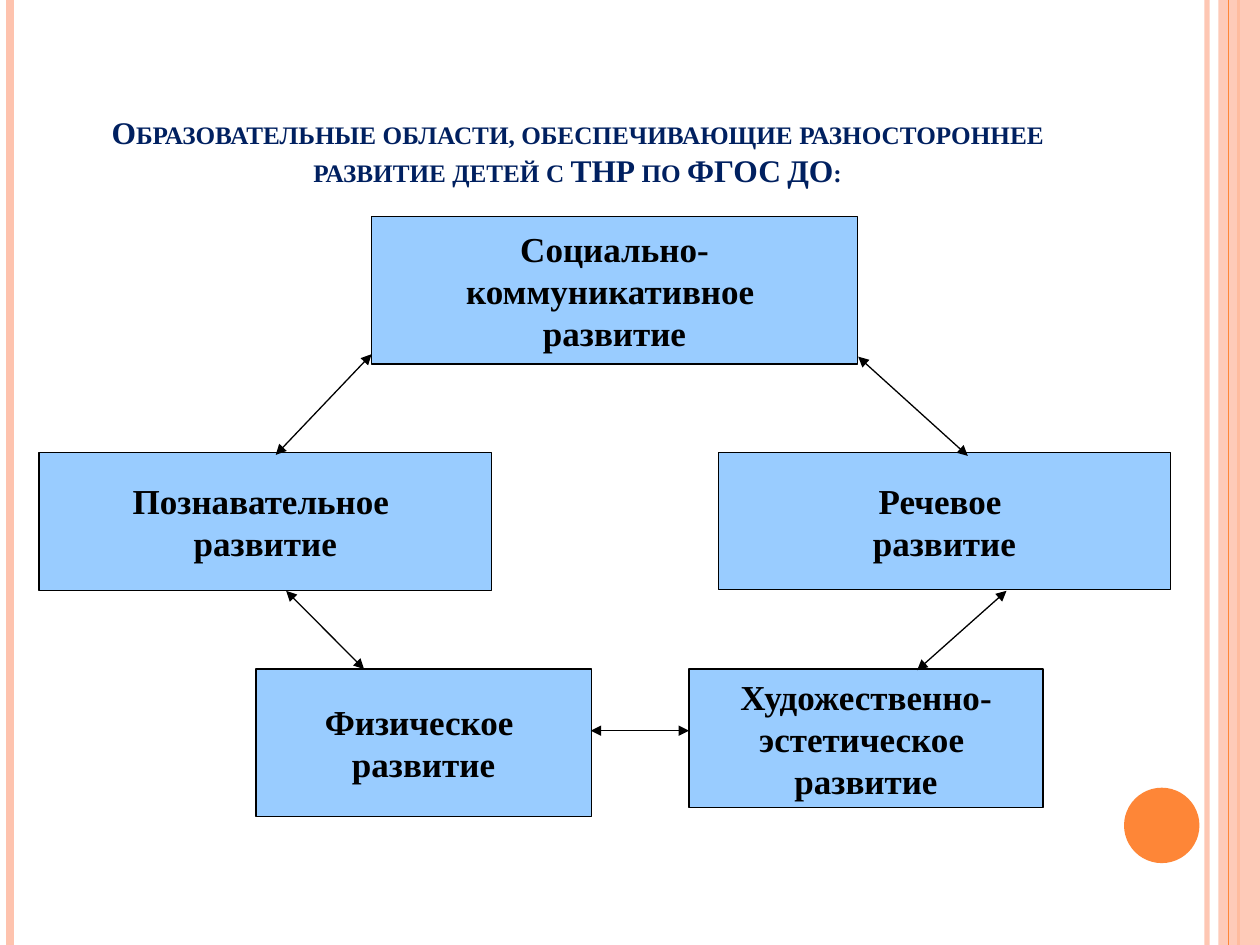
from lxml import etree
from pptx import Presentation
from pptx.dml.color import RGBColor
from pptx.enum.shapes import MSO_CONNECTOR, MSO_SHAPE
from pptx.enum.text import MSO_ANCHOR, MSO_AUTO_SIZE, PP_ALIGN
from pptx.oxml.ns import qn
from pptx.util import Cm, Pt

LINE = MSO_CONNECTOR.STRAIGHT
RECT, OVAL = MSO_SHAPE.RECTANGLE, MSO_SHAPE.OVAL
MID, LOW = MSO_ANCHOR.MIDDLE, MSO_ANCHOR.BOTTOM
MEAN = PP_ALIGN.CENTER
FIXED = MSO_AUTO_SIZE.NONE

HUES = {"peach": "FEC3AE", "orange": "FE8637", "navy": "002060",
        "sky": "99CCFF", "black": "000000"}
WIDE, HIGH = 25.4, 19.05

TITLE = ("Образовательные области, обеспечивающие разностороннее "
         "развитие детей с ТНР по ФГОС ДО:")
TITLE_AT = (1.27, 0.76, 20.75, 3.18)
BOXES = [
    (["Социально-", "коммуникативное ", "развитие"], (7.49, 4.37, 9.8, 2.97)),
    (["Художественно-", "эстетическое ", "развитие"], (13.89, 13.49, 7.14, 2.79)),
    (["Речевое ", "развитие"], (14.48, 9.12, 9.12, 2.77)),
    (["Физическое ", "развитие"], (5.16, 13.49, 6.76, 2.97)),
    (["Познавательное ", "развитие"], (0.79, 9.12, 9.12, 2.79)),
]
ARROWS = [
    (7.49, 7.14, 5.56, 9.17),
    (17.3, 7.19, 19.51, 9.19),
    (5.77, 11.91, 7.34, 13.49),
    (11.91, 14.73, 13.89, 14.73),
    (18.49, 13.51, 20.29, 11.91),
]
UNDER = [(24.33, "peach", 3, 93), (0.2, "peach", 4.5, 100),
         (24.97, "orange", 1.5, 100)]
BAND = (24.56, 0, 0.84, HIGH)
OVER = (24.77, "orange", 0.75, 100)
DOT = (22.66, 15.88, 1.52, 1.52)


def hue(name):
    return RGBColor.from_string(HUES[name])


def fade(node, part):
    if part < 100:
        tint = node.find(".//" + qn("a:srgbClr"))
        etree.SubElement(tint, qn("a:alpha"), val=str(part * 1000))


def style(item, **values):
    for key, value in values.items():
        setattr(item, key, value)


def write(frame, rows, size, color, anchor, wrap):
    style(frame, auto_size=FIXED, vertical_anchor=anchor, word_wrap=wrap)
    for i, row in enumerate(rows):
        para = frame.paragraphs[0] if i == 0 else frame.add_paragraph()
        para.alignment = MEAN
        run = para.add_run()
        run.text = row
        style(run.font, name="Times New Roman", size=Pt(size), bold=True)
        run.font.color.rgb = hue(color)
    return run


def draw(shapes, kind, spot, color, part=100):
    shape = shapes.add_shape(kind, *map(Cm, spot))
    shape.shadow.inherit = False
    shape.fill.solid()
    shape.fill.fore_color.rgb = hue(color)
    fade(shape._element.spPr, part)
    shape.line.fill.background()
    return shape


def link(shapes, ends, color, width, part=100, heads=False):
    line = shapes.add_connector(LINE, *map(Cm, ends))
    line.line.color.rgb = hue(color)
    line.line.width = Pt(width)
    props = line._element.spPr
    fade(props, part)
    if heads:
        for end in ("a:headEnd", "a:tailEnd"):
            etree.SubElement(props.find(qn("a:ln")), qn(end), type="triangle")
    etree.SubElement(props, qn("a:effectLst"))


def stripe(shapes, x, color, width, part):
    link(shapes, (x, 0, x, HIGH), color, width, part)


def main():
    deck = Presentation()
    style(deck, slide_width=Cm(WIDE), slide_height=Cm(HIGH))
    shapes = deck.slides.add_slide(deck.slide_layouts[5]).shapes

    for rule in UNDER:
        stripe(shapes, *rule)
    draw(shapes, RECT, BAND, "peach", 87)
    stripe(shapes, *OVER)
    draw(shapes, OVAL, DOT, "orange")

    head = shapes.title
    style(head, **dict(zip(("left", "top", "width", "height"), map(Cm, TITLE_AT))))
    run = write(head.text_frame, [TITLE], 18, "navy", LOW, True)
    run._r.get_or_add_rPr().set("cap", "small")

    for rows, spot in BOXES:
        box = draw(shapes, RECT, spot, "sky")
        box.line.color.rgb = hue("black")
        box.line.width = Pt(0.75)
        write(box.text_frame, rows, 20, "black", MID, False)
    for ends in ARROWS:
        link(shapes, ends, "black", 0.75, heads=True)

    deck.save("out.pptx")


if __name__ == "__main__":
    main()
